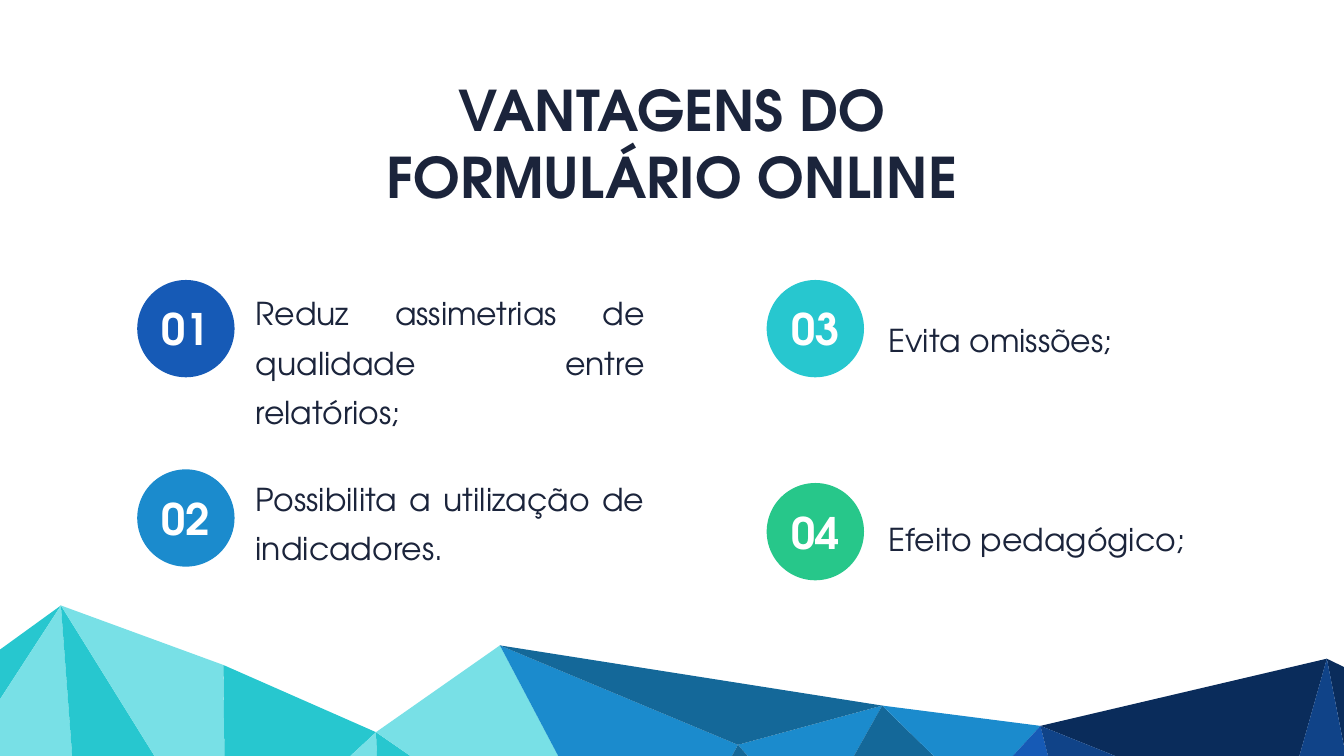
from pptx import Presentation
from pptx.dml.color import RGBColor
from pptx.enum.shapes import MSO_SHAPE
from pptx.enum.text import MSO_ANCHOR, PP_ALIGN
from pptx.util import Pt

FONT = "TeX Gyre Adventor"
INK = RGBColor(0x1B, 0x24, 0x3B)
WHITE = RGBColor(0xFF, 0xFF, 0xFF)
TEAL = RGBColor(0x27, 0xC7, 0xCF)
AQUA = RGBColor(0x78, 0xE0, 0xE6)
SKY = RGBColor(0x1B, 0x8B, 0xCD)
STEEL = RGBColor(0x14, 0x68, 0x99)
BLUE = RGBColor(0x16, 0x5A, 0xB6)
ROYAL = RGBColor(0x10, 0x43, 0x88)
NAVY = RGBColor(0x0A, 0x2C, 0x5B)
GREEN = RGBColor(0x27, 0xC7, 0x8A)

TITLE = "VANTAGENS DO FORMULÁRIO ONLINE"
DISC = 139

# number, colour, disc (left, top), text, text box (left, top, height)
ITEMS = [
    ("01", BLUE, (196, 400), "Reduz assimetrias de qualidade entre relatórios;",
     (358, 400, 177)),
    ("02", SKY, (196, 670.5), "Possibilita a utilização de indicadores.",
     (358, 665, 177)),
    ("03", TEAL, (1095, 400), "Evita omissões;", (1262, 438.5, 62)),
    ("04", GREEN, (1095, 690), "Efeito pedagógico;", (1262, 723, 62)),
]

# corners shared by the facets of the mountain range
NODES = {
    "a": (0, 928), "b": (0, 999), "c": (0, 1198), "d": (87, 865),
    "e": (112, 1198), "f": (294, 1198), "g": (319, 950), "h": (322, 1198),
    "i": (373, 1198), "j": (537, 1046), "k": (543, 1198), "l": (757, 1198),
    "m": (714, 922), "n": (860, 1199), "o": (980, 1201), "p": (1054, 1064),
    "q": (1131, 1201), "r": (1160, 1186), "s": (1260, 1008),
    "t": (1393, 1138), "u": (1486, 1037), "v": (1460, 1203),
    "w": (1528, 1203), "x": (1758, 1203), "y": (1829, 1175),
    "z": (1895, 941), "A": (1930, 958), "B": (1930, 1120),
    "C": (1930, 1203), "D": (1872, 1203),
}
FACETS = [
    ("dab", TEAL), ("edbc", AQUA), ("fde", TEAL), ("hgdf", AQUA),
    ("ijgh", TEAL), ("kji", AQUA), ("ljk", TEAL), ("nmjl", AQUA),
    ("opmn", SKY), ("prs", SKY), ("rts", STEEL), ("stu", SKY),
    ("wutv", BLUE), ("uyz", NAVY), ("xyuw", ROYAL), ("AzB", NAVY),
    ("CBzyD", ROYAL), ("msp", STEEL), ("qrpo", STEEL),
]


def paint(shape, color):
    shape.shadow.inherit = False
    shape.fill.solid()
    shape.fill.fore_color.rgb = color
    shape.line.fill.background()


def style(para, size, color, align, bold=False):
    para.alignment = align
    font = para.font
    font.name, font.size, font.bold = FONT, Pt(size), bold
    font.color.rgb = color


def add_text(slide, box, text, *look):
    frame = slide.shapes.add_textbox(*map(Pt, box)).text_frame
    frame.word_wrap = True
    frame.text = text
    para = frame.paragraphs[0]
    style(para, *look)
    return para


def add_facet(slide, names, color):
    first, *rest = [NODES[name] for name in names]
    pen = slide.shapes.build_freeform(*first, scale=Pt(1))
    pen.add_line_segments(rest, close=True)
    paint(pen.convert_to_shape(), color)


def add_disc(slide, label, color, spot):
    disc = slide.shapes.add_shape(
        MSO_SHAPE.OVAL, *map(Pt, (*spot, DISC, DISC)))
    paint(disc, color)
    frame = disc.text_frame
    frame.word_wrap = False
    frame.vertical_anchor = MSO_ANCHOR.MIDDLE
    frame.margin_left = frame.margin_right = 0
    frame.margin_top = frame.margin_bottom = 0
    frame.text = label
    style(frame.paragraphs[0], 62, WHITE, PP_ALIGN.CENTER, True)


def main():
    deck = Presentation()
    deck.slide_width, deck.slide_height = Pt(1919.52), Pt(1080)
    slide = deck.slides.add_slide(deck.slide_layouts[6])

    for names, color in FACETS:
        add_facet(slide, names, color)
    add_text(slide, (394, 104, 1132, 194), TITLE,
             80, INK, PP_ALIGN.CENTER, True)
    for label, color, spot, text, (left, top, high) in ITEMS:
        add_disc(slide, label, color, spot)
        para = add_text(slide, (left, top, 569.5, high), text,
                        45, INK, PP_ALIGN.JUSTIFY)
        para.line_spacing = 1.31

    deck.save("out.pptx")


if __name__ == "__main__":
    main()
